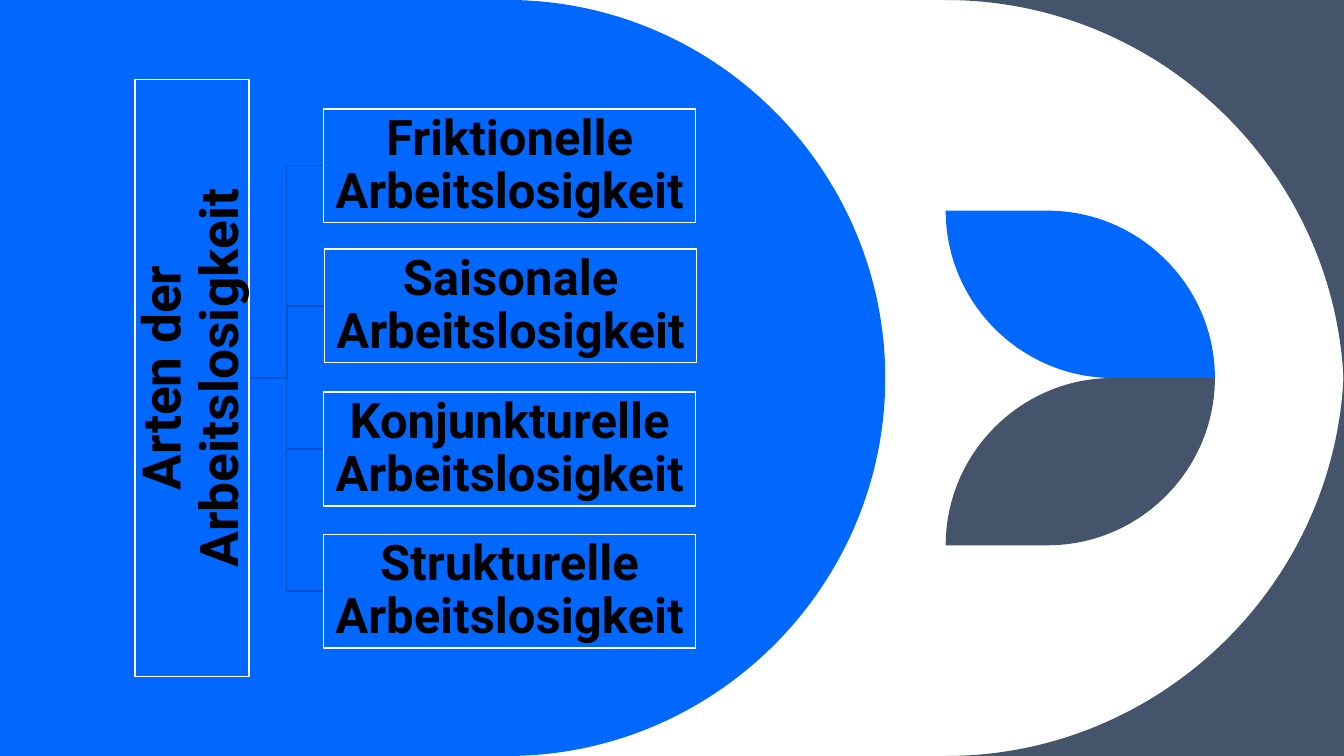
from lxml import etree
from pptx import Presentation
from pptx.dml.color import RGBColor
from pptx.enum.shapes import MSO_CONNECTOR, MSO_SHAPE
from pptx.enum.text import MSO_ANCHOR, PP_ALIGN
from pptx.oxml.ns import qn
from pptx.util import Inches, Pt

BLUE = RGBColor(0x00, 0x68, 0xFF)
DARK_BLUE = RGBColor(0x00, 0x53, 0xCC)
SLATE = RGBColor(0x44, 0x54, 0x6A)
WHITE = RGBColor(0xFF, 0xFF, 0xFF)
BLACK = RGBColor(0x00, 0x00, 0x00)
FONT = "Roboto"
RECTANGLE = MSO_SHAPE.RECTANGLE
ELBOW = MSO_CONNECTOR.ELBOW
CENTER = PP_ALIGN.CENTER
MIDDLE = MSO_ANCHOR.MIDDLE

WIDTH, HEIGHT = 13.33, 7.5
ROUND = 0.55  # Bezier handle length of a quarter circle
# How a segment reaches its point: straight, or a quarter arc leaving
# horizontally or vertically
LINE, ACROSS, DOWN = range(3)

ROOT = "Arten der Arbeitslosigkeit"
# Label, left and top of each branch box
BRANCHES = [
    ("Friktionelle Arbeitslosigkeit", 3.21, 1.08),
    ("Saisonale Arbeitslosigkeit", 3.22, 2.47),
    ("Konjunkturelle Arbeitslosigkeit", 3.21, 3.89),
    ("Strukturelle Arbeitslosigkeit", 3.21, 5.3),
]


def add_outline(s, points, color):
    """Closed outline through (x, y, segment kind) points in inches."""
    corners = [(Inches(x), Inches(y)) for x, y, _ in points]
    builder = s.shapes.build_freeform(*corners[0], scale=1.0)
    builder.add_line_segments(corners[1:], close=True)
    sp = builder.convert_to_shape()
    sp.shadow.inherit = False
    sp.fill.solid()
    sp.fill.fore_color.rgb = color
    sp.line.fill.background()

    # Bend the straight segments that are quarter arcs
    segments = list(sp._element.iter(qn("a:lnTo")))
    for segment, (x1, y1), (x2, y2), point in zip(segments, corners, corners[1:], points[1:]):
        if point[2] == LINE:
            continue
        cx, cy = (x2, y1) if point[2] == ACROSS else (x1, y2)
        segment.tag = qn("a:cubicBezTo")
        handles = [(x + ROUND * (cx - x), y + ROUND * (cy - y))
                   for x, y in ((x1, y1), (x2, y2))]
        for i, (x, y) in enumerate(handles):
            pt = etree.Element(qn("a:pt"), x=str(round(x - sp.left)), y=str(round(y - sp.top)))
            segment.insert(i, pt)


def add_panel(s, left, top, width, height):
    right, bottom, radius = left + width, top + height, height / 2
    add_outline(s, [(left, top, LINE), (right - radius, top, LINE),
                    (right, top + radius, ACROSS), (right - radius, bottom, DOWN),
                    (left, bottom, LINE)], BLUE)


def add_leaves(s, left, top, width, height):
    right, radius = left + width, height / 2
    middle = top + radius
    for edge, color in ((top, BLUE), (top + height, SLATE)):
        add_outline(s, [(left, edge, LINE), (right - radius, edge, LINE),
                        (right, middle, ACROSS), (left + radius, middle, LINE),
                        (left, edge, ACROSS)], color)


def add_corners(s, left, top, width, height):
    right, bottom = left + width, top + height
    for edge, inner in ((top, top + width), (bottom, bottom - width)):
        add_outline(s, [(left, edge, LINE), (right, inner, ACROSS), (right, edge, LINE)], SLATE)


def add_box(s, text, left, top, width, height, size, inset, rotation=0):
    sp = s.shapes.add_shape(RECTANGLE, Inches(left), Inches(top), Inches(width), Inches(height))
    sp.shadow.inherit = False
    sp.rotation = rotation
    sp.fill.solid()
    sp.fill.fore_color.rgb = BLUE
    sp.line.color.rgb = WHITE
    sp.line.width = Pt(1)
    tf = sp.text_frame
    tf.word_wrap = True
    tf.vertical_anchor = MIDDLE
    tf.margin_left = tf.margin_right = tf.margin_top = tf.margin_bottom = Inches(inset)
    tf.text = text
    p = tf.paragraphs[0]
    p.alignment = CENTER
    p.line_spacing = 0.9
    font = p.runs[0].font
    font.name, font.size, font.bold = FONT, Pt(size), True
    font.color.rgb = BLACK


def add_elbow(s, x1, y1, x2, y2):
    line = s.shapes.add_connector(ELBOW, Inches(x1), Inches(y1), Inches(x2), Inches(y2))
    line.line.color.rgb = DARK_BLUE
    line.line.width = Pt(1)
    etree.SubElement(line._element.spPr, qn("a:effectLst"))


def add_tree(s, left, top, root_width, root_height, branch_width, branch_height):
    cx, cy = left + root_width / 2, top + root_height / 2

    # Connectors
    for _, x, y in reversed(BRANCHES):
        add_elbow(s, left + root_width, cy, x, y + branch_height / 2)

    # Root box, turned to read upwards
    add_box(s, ROOT, cx - root_height / 2, cy - root_width / 2,
            root_height, root_width, 38, 0.03, 270)

    # Branch boxes
    for text, x, y in BRANCHES:
        add_box(s, text, x, y, branch_width, branch_height, 35, 0.02)


def main():
    prs = Presentation()
    prs.slide_width, prs.slide_height = Inches(WIDTH), Inches(HEIGHT)
    s = prs.slides.add_slide(prs.slide_layouts[6])
    add_panel(s, 0, 0, 8.78, HEIGHT)
    add_leaves(s, 9.38, 2.09, 2.67, 3.32)
    add_corners(s, 9.38, 0, 3.95, HEIGHT)
    add_tree(s, 1.34, 0.79, 1.13, 5.92, 3.69, 1.13)
    prs.save("out.pptx")


if __name__ == "__main__":
    main()
